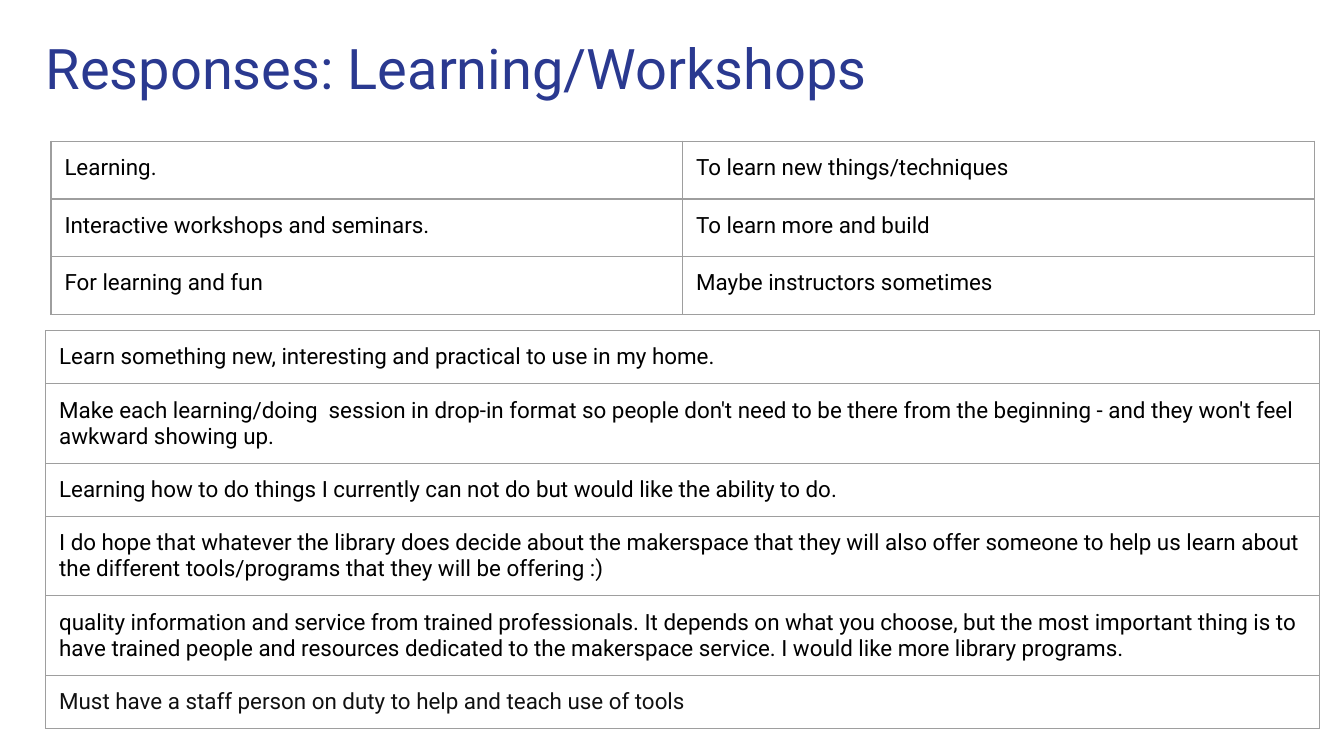
import pptx
import pptx.util
import pptx.dml.color
import pptx.enum.text
import pptx.oxml
import pptx.oxml.ns

THEME = {
    "font": "Roboto",
    "title_size": 30,
    "body_size": 12,
    "title": "2A3990",
    "text": "000000",
    "soft_text": "111111",
    "border": "9E9E9E",
    "border_width": 0.75,
    "inset": pptx.util.Inches(0.1),
}


def write_text(frame, text, size=THEME["body_size"], color=THEME["text"]):
    frame.word_wrap = True
    frame.margin_left = frame.margin_right = THEME["inset"]
    frame.margin_top = frame.margin_bottom = THEME["inset"]
    paragraph = frame.paragraphs[0]
    paragraph.alignment = pptx.enum.text.PP_ALIGN.LEFT
    run = paragraph.add_run()
    run.text = text
    run.font.name = THEME["font"]
    run.font.size = pptx.util.Pt(size)
    run.font.bold = False
    run.font.color.rgb = pptx.dml.color.RGBColor.from_string(color)


def set_borders(cell):
    properties = cell._tc.get_or_add_tcPr()
    width = pptx.util.Pt(THEME["border_width"])
    for position, side in enumerate(("lnL", "lnR", "lnT", "lnB")):
        line = pptx.oxml.parse_xml(
            f'<a:{side} {pptx.oxml.ns.nsdecls("a")} w="{width}"><a:solidFill>'
            f'<a:srgbClr val="{THEME["border"]}"/></a:solidFill></a:{side}>'
        )
        properties.insert(position, line)


presentation = pptx.Presentation()
presentation.slide_width = pptx.util.Inches(10)
presentation.slide_height = presentation.slide_width * 9 // 16
slide = presentation.slides.add_slide(presentation.slide_layouts[5])

title = slide.shapes.title
title.left, title.top = pptx.util.Inches(0.24), pptx.util.Inches(0.15)
title.width, title.height = pptx.util.Inches(9.32), pptx.util.Inches(0.66)
title.text_frame.auto_size = pptx.enum.text.MSO_AUTO_SIZE.NONE
title.text_frame.vertical_anchor = pptx.enum.text.MSO_ANCHOR.TOP
write_text(title.text_frame, "Responses: Learning/Workshops",
           size=THEME["title_size"], color=THEME["title"])

long_responses = [
    ["Learn something new, interesting and practical to use in my home."],
    ["Make each learning/doing  session in drop-in format so people don't need to be there "
     "from the beginning - and they won't feel awkward showing up."],
    ["Learning how to do things I currently can not do but would like the ability to do."],
    ["I do hope that whatever the library does decide about the makerspace that they will also "
     "offer someone to help us learn about the different tools/programs that they will be offering :)"],
    ["quality information and service from trained professionals. It depends on what you choose, "
     "but the most important thing is to have trained people and resources dedicated to the "
     "makerspace service. I would like more library programs."],
    ["Must have a staff person on duty to help and teach use of tools"],
]
short_responses = [
    ["Learning.", "To learn new things/techniques"],
    ["Interactive workshops and seminars.", "To learn more and build"],
    ["For learning and fun", "Maybe instructors sometimes"],
]
tables = [
    (long_responses, 0.34, 2.46, 9.48, 0.37, THEME["soft_text"]),
    (short_responses, 0.38, 1.05, 9.4, 0.43, THEME["text"]),
]

for responses, left, top, width, row_height, last_color in tables:
    table = slide.shapes.add_table(
        len(responses), len(responses[0]),
        pptx.util.Inches(left), pptx.util.Inches(top),
        pptx.util.Inches(width), pptx.util.Inches(row_height * len(responses)),
    ).table
    table.first_row = False
    table.horz_banding = False
    for row, texts in enumerate(responses):
        color = last_color if row == len(responses) - 1 else THEME["text"]
        for column, text in enumerate(texts):
            cell = table.cell(row, column)
            cell.margin_left = cell.margin_right = THEME["inset"]
            cell.margin_top = cell.margin_bottom = THEME["inset"]
            cell.fill.background()
            set_borders(cell)
            write_text(cell.text_frame, text, color=color)

presentation.save("out.pptx")
